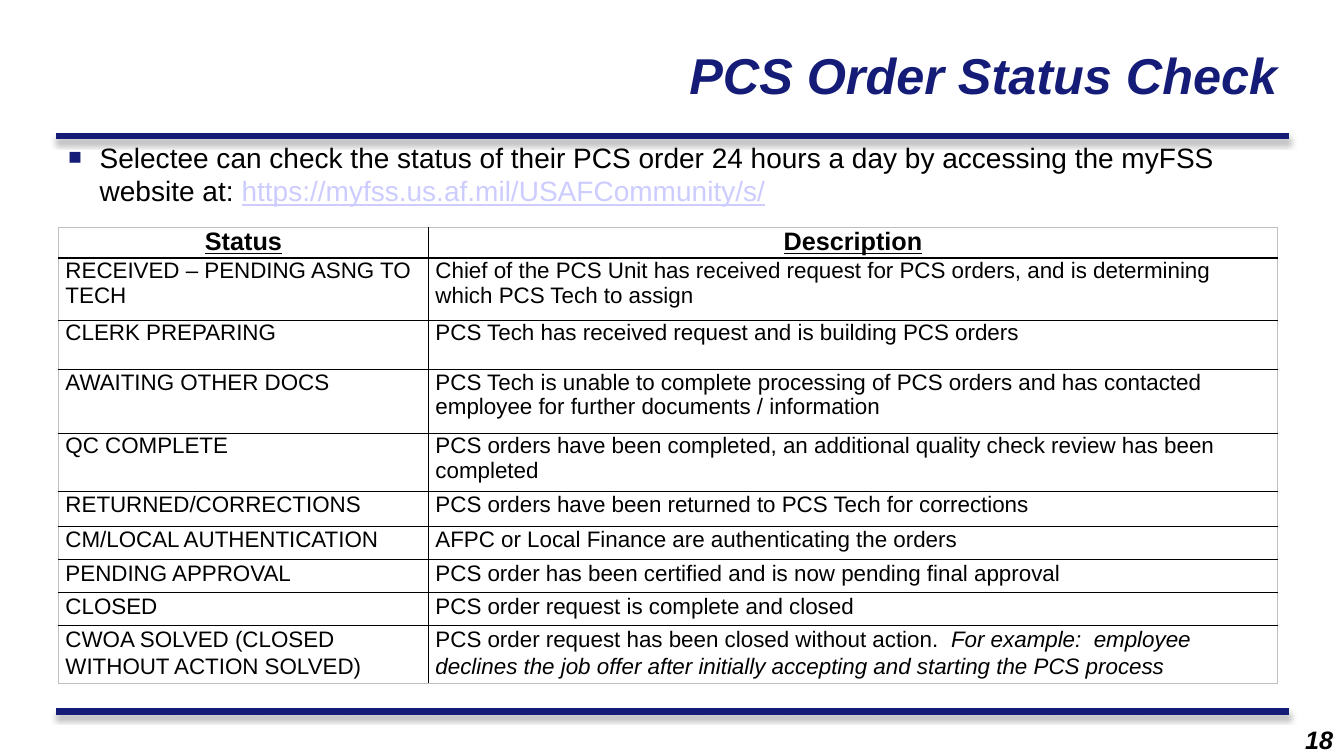
from dataclasses import dataclass

from lxml.etree import SubElement
from pptx import Presentation
from pptx.dml.color import RGBColor
from pptx.enum.shapes import MSO_CONNECTOR as Connector
from pptx.enum.text import MSO_ANCHOR as Anchor, PP_ALIGN as Align
from pptx.oxml.ns import qn
from pptx.util import Inches, Pt


@dataclass(frozen=True)
class Theme:
    font: str = "Arial"
    navy: str = "151C77"
    ink: str = "000000"
    link: str = "CCCCFF"
    frame: str = "BFBFBF"
    title: int = 36
    body: int = 20
    header: int = 18
    cell: int = 16


THEME = Theme()
COLUMNS = (3.67, 8.42)
HEADER_HEIGHT = 0.28
HEADINGS = ("Status", "Description")
STATUSES = (
    (0.62, "RECEIVED – PENDING ASNG TO TECH",
     "Chief of the PCS Unit has received request for PCS orders, and is determining which PCS Tech to assign"),
    (0.49, "CLERK PREPARING", "PCS Tech has received request and is building PCS orders"),
    (0.63, "AWAITING OTHER DOCS",
     "PCS Tech is unable to complete processing of PCS orders and has contacted employee "
     "for further documents / information"),
    (0.58, "QC COMPLETE",
     "PCS orders have been completed, an additional quality check review has been completed"),
    (0.34, "RETURNED/CORRECTIONS", "PCS orders have been returned to PCS Tech for corrections"),
    (0.33, "CM/LOCAL AUTHENTICATION", "AFPC or Local Finance are authenticating the orders"),
    (0.33, "PENDING APPROVAL", "PCS order has been certified and is now pending final approval"),
    (0.33, "CLOSED", "PCS order request is complete and closed"),
    (0.53, "CWOA SOLVED (CLOSED WITHOUT ACTION SOLVED)",
     "PCS order request has been closed without action.  "),
)
EXAMPLE = "For example:  employee declines the job offer after initially accepting and starting the PCS process"
FIRST_SPACED_ROW = 6


def add_span(para, text, size=THEME.cell, color=THEME.ink, bold=False, italic=False, underline=False):
    span = para.add_run()
    span.text = text
    font = span.font
    font.name, font.size = THEME.font, Pt(size)
    font.bold, font.italic, font.underline = bold, italic, underline
    font.color.rgb = RGBColor.from_string(color)


def add_box(page, left, top, width, height, anchor=Anchor.TOP, align=Align.LEFT):
    box = page.shapes.add_textbox(Inches(left), Inches(top), Inches(width), Inches(height))
    frame = box.text_frame
    frame.word_wrap = True
    frame.vertical_anchor = anchor
    para = frame.paragraphs[0]
    para.alignment = align
    return para


def add_bullet(para, indent):
    properties = para._p.get_or_add_pPr()
    properties.set("marL", str(Inches(indent)))
    properties.set("indent", str(-Inches(indent)))
    color = SubElement(properties, qn("a:buClr"))
    SubElement(color, qn("a:srgbClr"), val=THEME.navy)
    SubElement(properties, qn("a:buSzPct"), val="80000")
    SubElement(properties, qn("a:buFont"), typeface=THEME.font)
    SubElement(properties, qn("a:buChar"), char="■")


def add_rule(page, top):
    rule = page.shapes.add_connector(
        Connector.STRAIGHT, Inches(0.56), Inches(top), Inches(12.78), Inches(top))
    rule.line.color.rgb = RGBColor.from_string(THEME.navy)
    rule.line.width = Pt(4.5)
    effects = SubElement(rule._element.spPr, qn("a:effectLst"))
    shadow = SubElement(effects, qn("a:outerShdw"), blurRad=str(Pt(4)), dist=str(Pt(3)),
                        dir="5400000", rotWithShape="0")
    color = SubElement(shadow, qn("a:srgbClr"), val=THEME.ink)
    SubElement(color, qn("a:alpha"), val="40000")


def set_borders(cell, outer_sides):
    properties = cell._tc.get_or_add_tcPr()
    for side in "LRTB":
        outer = side in outer_sides
        border = SubElement(properties, qn(f"a:ln{side}"), w=str(Pt(0.5 if outer else 1)))
        fill = SubElement(border, qn("a:solidFill"))
        SubElement(fill, qn("a:srgbClr"), val=THEME.frame if outer else THEME.ink)


def fill_cell(cell, text, outer_sides, header=False, spaced=False):
    cell.margin_left = cell.margin_right = Inches(0.07)
    cell.margin_top = cell.margin_bottom = 0
    set_borders(cell, outer_sides)
    cell.fill.background()
    para = cell.text_frame.paragraphs[0]
    para.alignment = Align.CENTER if header else Align.LEFT
    if spaced:
        para.line_spacing = 1.07
        para.space_after = Pt(8)
    add_span(para, text, THEME.header if header else THEME.cell, bold=header, underline=header)
    return para


def add_status_table(page):
    heights = [HEADER_HEIGHT] + [status[0] for status in STATUSES]
    rows = [HEADINGS] + [status[1:] for status in STATUSES]
    table = page.shapes.add_table(
        len(rows), len(COLUMNS), Inches(0.58), Inches(2.26),
        Inches(sum(COLUMNS)), Inches(sum(heights))).table
    table.first_row = table.horz_banding = False
    for column, width in zip(table.columns, COLUMNS):
        column.width = Inches(width)
    last = len(rows) - 1
    for index, texts in enumerate(rows):
        table.rows[index].height = Inches(heights[index])
        edge = {0: "T", last: "B"}.get(index, "")
        for column, text in enumerate(texts):
            para = fill_cell(table.cell(index, column), text, edge + "LR"[column],
                             header=index == 0, spaced=index >= FIRST_SPACED_ROW)
    add_span(para, EXAMPLE, italic=True)


def main():
    deck = Presentation()
    deck.slide_width, deck.slide_height = Inches(13.33), Inches(7.5)
    page = deck.slides.add_slide(deck.slide_layouts[6])

    for top in (7.06, 1.35):
        add_rule(page, top)

    title = add_box(page, 5.27, 0.25, 7.5, 0.98, Anchor.MIDDLE, Align.RIGHT)
    add_span(title, "PCS Order Status Check", THEME.title, THEME.navy, bold=True, italic=True)

    intro = add_box(page, 0.58, 1.34, 12.08, 0.9)
    add_bullet(intro, 0.31)
    add_span(intro, "Selectee can check the status of their PCS order 24 hours a day by accessing "
                    "the myFSS website at: ", THEME.body)
    add_span(intro, "https://myfss.us.af.mil/USAFCommunity/s/", THEME.body, THEME.link, underline=True)

    add_status_table(page)

    number = add_box(page, 11.65, 7.14, 1.67, 0.33, align=Align.RIGHT)
    add_span(number, "18", THEME.header, bold=True, italic=True)

    deck.save("out.pptx")


if __name__ == "__main__":
    main()
